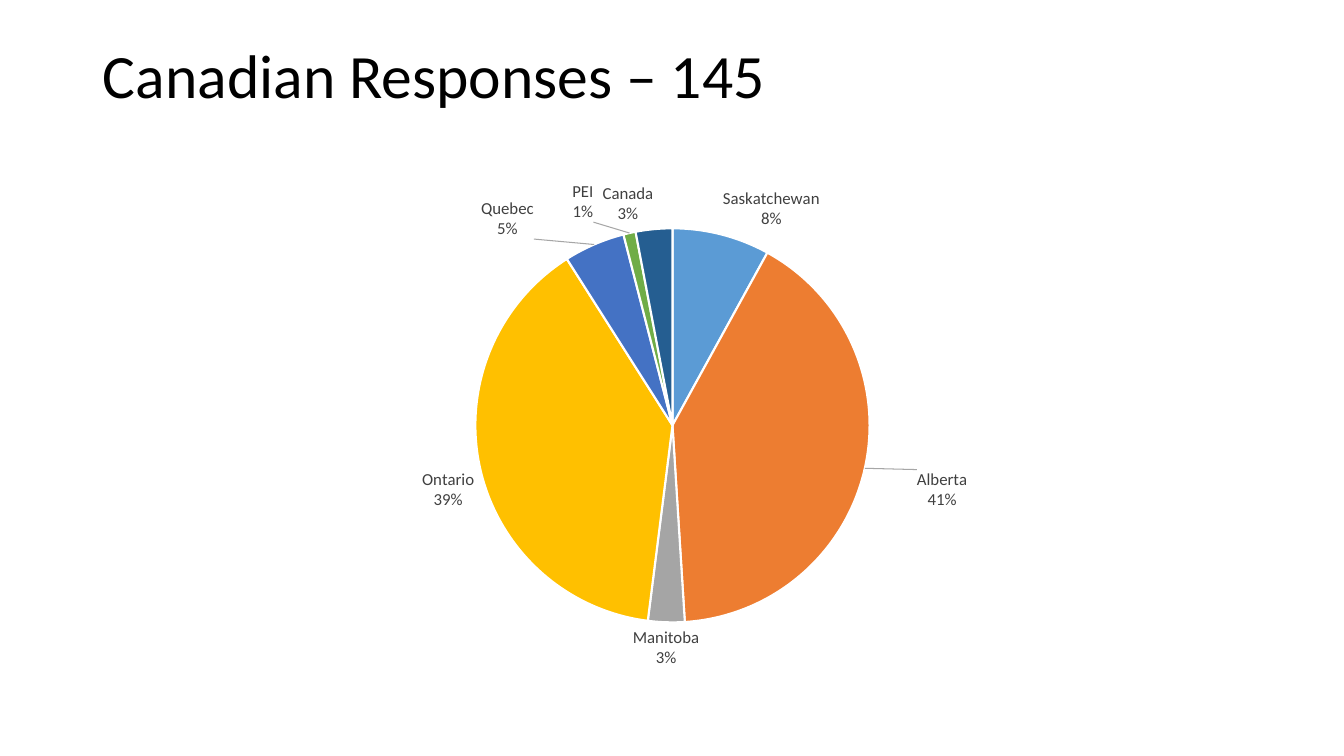
from copy import deepcopy
from dataclasses import dataclass

from pptx import Presentation
from pptx.chart.data import CategoryChartData
from pptx.dml.color import RGBColor
from pptx.enum.chart import XL_CHART_TYPE, XL_LABEL_POSITION
from pptx.enum.text import MSO_ANCHOR, PP_ALIGN
from pptx.oxml import parse_xml
from pptx.oxml.ns import qn
from pptx.util import Inches, Pt

PIE = XL_CHART_TYPE.PIE
OUTSIDE_END = XL_LABEL_POSITION.OUTSIDE_END
TOP = MSO_ANCHOR.TOP
LEFT = PP_ALIGN.LEFT
NS = ('xmlns:c="http://schemas.openxmlformats.org/drawingml/2006/chart" '
      'xmlns:a="http://schemas.openxmlformats.org/drawingml/2006/main"')


@dataclass(frozen=True)
class Theme:
    font: str = "Calibri"
    title_size: int = 44
    chart_size: int = 10
    label_size: int = 12
    title: str = "000000"
    label: str = "404040"
    leader: str = "A6A6A6"
    slice_border: str = "FFFFFF"


THEME = Theme()

# Province, share in percent, slice colour
RESPONSES = [
    ("Saskatchewan", 8, "5B9BD5"),
    ("Alberta", 41, "ED7D31"),
    ("Manitoba", 3, "A5A5A5"),
    ("Ontario", 39, "FFC000"),
    ("Quebec", 5, "4472C4"),
    ("PEI", 1, "70AD47"),
    ("Canada", 3, "255E91"),
]
# Label shifts as fractions of the chart's width and height
LABEL_SHIFTS = {"Alberta": (0.04, 0), "Quebec": (-0.05, 0), "PEI": (-0.03, -0.01)}


def style_font(font, size, color):
    font.name = THEME.font
    font.size = Pt(size)
    font.color.rgb = RGBColor.from_string(color)


def add_title(slide, text, x, y, w, h):
    sp = slide.shapes.title
    sp.left, sp.top, sp.width, sp.height = (Inches(v) for v in (x, y, w, h))
    tf = sp.text_frame
    tf.text = text
    tf.vertical_anchor = TOP
    p = tf.paragraphs[0]
    p.alignment = LEFT
    p.line_spacing = 0.9
    style_font(p.font, THEME.title_size, THEME.title)


def place_plot(chart, x, y, w, h):
    """Fix the pie's inner area, in fractions of the chart box."""
    plot_area = chart.plots[0]._element.getparent()
    for layout in plot_area.findall(qn("c:layout")):
        plot_area.remove(layout)
    plot_area.insert(0, parse_xml(
        f'<c:layout {NS}><c:manualLayout><c:layoutTarget val="inner"/>'
        f'<c:xMode val="edge"/><c:yMode val="edge"/><c:x val="{x}"/><c:y val="{y}"/>'
        f'<c:w val="{w}"/><c:h val="{h}"/></c:manualLayout></c:layout>'))


def label_slices(series):
    """Show name and percentage, with leader lines to the shifted labels."""
    labels = series.data_labels
    style_font(labels.font, THEME.label_size, THEME.label)
    labels.show_value = False
    labels.show_category_name = True
    labels.show_percentage = True
    labels.position = OUTSIDE_END

    root = labels._element
    root.find(qn("c:showBubbleSize")).addnext(
        parse_xml(f"<c:separator {NS}>\n</c:separator>"))
    for old in root.findall(qn("c:showLeaderLines")):
        root.remove(old)
    shared = list(root)
    names = [name for name, _, _ in RESPONSES]
    for position, (name, (dx, dy)) in enumerate(LABEL_SHIFTS.items()):
        label = parse_xml(
            f'<c:dLbl {NS}><c:idx val="{names.index(name)}"/><c:layout><c:manualLayout>'
            f'<c:x val="{dx}"/><c:y val="{dy}"/></c:manualLayout></c:layout></c:dLbl>')
        label.extend(deepcopy(part) for part in shared)
        root.insert(position, label)
    root.append(parse_xml(f'<c:showLeaderLines {NS} val="1"/>'))
    root.append(parse_xml(
        f'<c:leaderLines {NS}><c:spPr><a:ln w="9525"><a:solidFill>'
        f'<a:srgbClr val="{THEME.leader}"/></a:solidFill></a:ln></c:spPr></c:leaderLines>'))


def add_response_pie(slide, x, y, w, h):
    data = CategoryChartData()
    data.categories = [name for name, _, _ in RESPONSES]
    data.add_series("Series 1", [share for _, share, _ in RESPONSES])
    chart = slide.shapes.add_chart(
        PIE, Inches(x), Inches(y), Inches(w), Inches(h), data).chart
    chart.has_legend = False
    chart.has_title = False
    style_font(chart.font, THEME.chart_size, THEME.title)
    chart.plots[0].vary_by_categories = True
    place_plot(chart, 0.33, 0.12, 0.34, 0.77)

    series = chart.plots[0].series[0]
    for i, (_, _, color) in enumerate(RESPONSES):
        fmt = series.points[i].format
        fmt.fill.solid()
        fmt.fill.fore_color.rgb = RGBColor.from_string(color)
        fmt.line.color.rgb = RGBColor.from_string(THEME.slice_border)
        fmt.line.width = Pt(1.5)
    label_slices(series)


def main():
    prs = Presentation()
    prs.slide_width, prs.slide_height = Inches(13.33), Inches(7.5)
    slide = prs.slides.add_slide(prs.slide_layouts[5])
    add_title(slide, "Canadian Responses – 145", 0.92, 0.4, 11.5, 1.45)
    add_response_pie(slide, 0.92, 1.64, 11.5, 5.11)
    prs.save("out.pptx")


if __name__ == "__main__":
    main()
